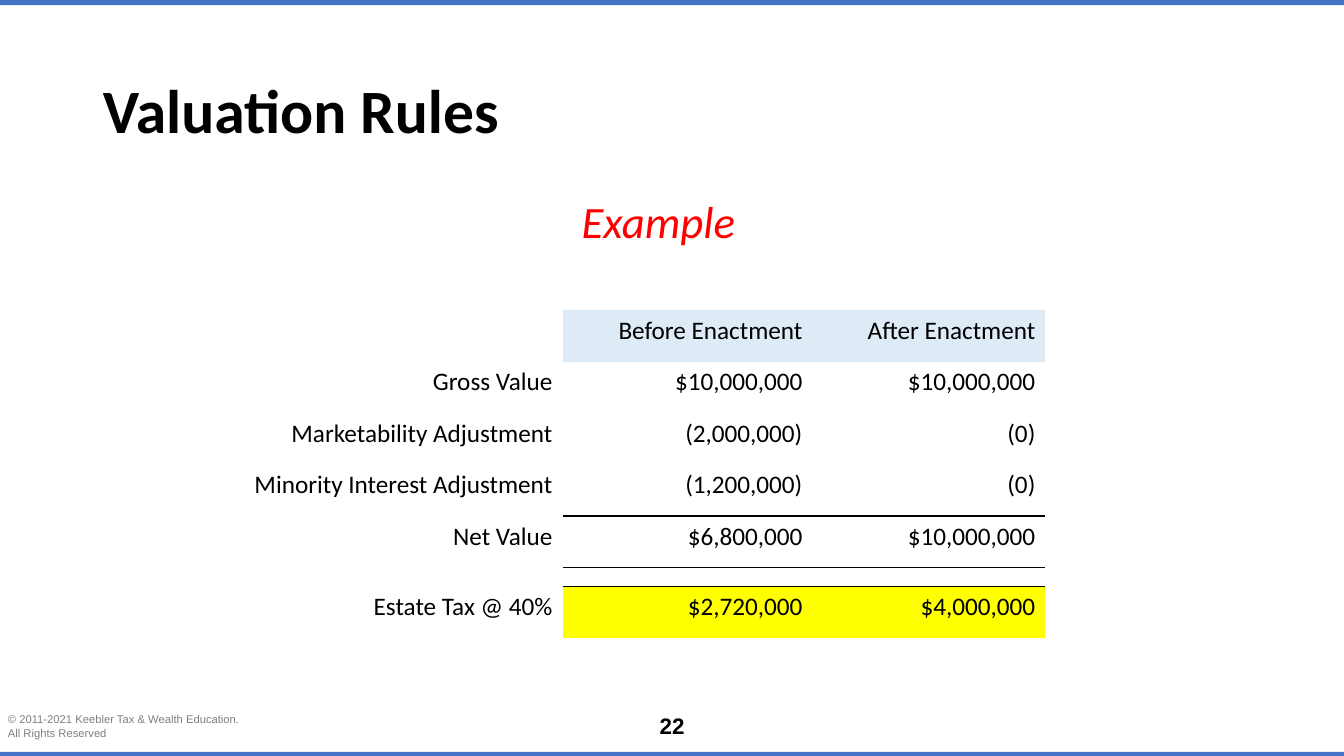
from lxml import etree
from pptx import Presentation
from pptx.dml.color import RGBColor
from pptx.enum.shapes import MSO_SHAPE
from pptx.enum.text import MSO_ANCHOR, PP_ALIGN
from pptx.oxml.ns import qn
from pptx.util import Inches, Pt

LEFT, CENTER, RIGHT = PP_ALIGN.LEFT, PP_ALIGN.CENTER, PP_ALIGN.RIGHT
TOP, MIDDLE = MSO_ANCHOR.TOP, MSO_ANCHOR.MIDDLE
RECTANGLE = MSO_SHAPE.RECTANGLE
TITLE_ONLY = 5
PLAIN_TABLE_STYLE = "{2D5ABB26-0587-4C30-8999-92F81FD0307C}"

COLORS = {
    "black": "000000",
    "gray": "7F7F7F",
    "red": "FF0000",
    "bar": "4472C4",
    "header": "DEEBF7",
    "highlight": "FFFF00",
}

VALUATION_ROWS = [
    ("", "Before Enactment", "After Enactment"),
    ("Gross Value", "$10,000,000", "$10,000,000"),
    ("Marketability Adjustment", "(2,000,000)", "(0)"),
    ("Minority Interest Adjustment", "(1,200,000)", "(0)"),
    ("Net Value", "$6,800,000", "$10,000,000"),
    ("", "", ""),
    ("Estate Tax @ 40%", "$2,720,000", "$4,000,000"),
]
COLUMN_WIDTHS = (3.82, 2.48, 2.31)
ROW_HEIGHT = 0.51
SPACER_HEIGHT = 0.19
SPACER_ROW = 5
RULED_ROWS = (4, 5, 6)
ROW_FILLS = {0: "header", 6: "highlight"}


def rgb(color):
    return RGBColor.from_string(COLORS[color])


def format_text(text_frame, size, color="black", font="Calibri", align=LEFT, bold=False, italic=False):
    for paragraph in text_frame.paragraphs:
        paragraph.alignment = align
        for run in paragraph.runs:
            run.font.name = font
            run.font.size = Pt(size)
            run.font.bold = bold
            run.font.italic = italic
            run.font.color.rgb = rgb(color)


def place(shape, box):
    shape.left, shape.top, shape.width, shape.height = (Inches(length) for length in box)


def add_text(slide, box, text, size, anchor=TOP, wrap=True, **style):
    shape = slide.shapes.add_textbox(*(Inches(length) for length in box))
    text_frame = shape.text_frame
    text_frame.word_wrap = wrap
    text_frame.vertical_anchor = anchor
    text_frame.text = text
    format_text(text_frame, size, **style)


def add_bar(slide, box):
    bar = slide.shapes.add_shape(RECTANGLE, *(Inches(length) for length in box))
    bar.shadow.inherit = False
    bar.fill.solid()
    bar.fill.fore_color.rgb = rgb("bar")
    bar.line.fill.background()


def add_frame(slide):
    for top in (0, 7.46):
        add_bar(slide, (0, top, 13.33, 0.05))
    copyright_text = "© 2011-2021 Keebler Tax & Wealth Education.\nAll Rights Reserved"
    add_text(slide, (-0.02, 7.02, 2.55, 0.37), copyright_text, 8, wrap=False, font="Arial", color="gray")
    add_text(slide, (6.29, 7.02, 0.75, 0.37), "22", 16, font="Arial", align=CENTER, bold=True)


def add_title(slide, box):
    title = slide.shapes.title
    place(title, box)
    title.text_frame.text = "Valuation Rules"
    title.text_frame.vertical_anchor = MIDDLE
    title.text_frame.paragraphs[0].line_spacing = 0.9
    format_text(title.text_frame, 44, bold=True)


def add_border(cell, side):
    properties = cell._tc.get_or_add_tcPr()
    line = etree.SubElement(properties, qn(f"a:{side}"), w=str(Pt(1)))
    fill = etree.SubElement(line, qn("a:solidFill"))
    etree.SubElement(fill, qn("a:srgbClr"), val=COLORS["black"])


def format_cell(cell, row, column, text):
    cell.text = text
    format_text(cell.text_frame, 18, align=RIGHT)
    if row == SPACER_ROW:
        cell.margin_top = cell.margin_bottom = 0
        paragraph = cell.text_frame.paragraphs[0]
        etree.SubElement(paragraph._p, qn("a:endParaRPr"), sz="800")
    if column and row in RULED_ROWS:
        add_border(cell, "lnT")
    if column and row + 1 in RULED_ROWS:
        add_border(cell, "lnB")
    if column and row in ROW_FILLS:
        cell.fill.solid()
        cell.fill.fore_color.rgb = rgb(ROW_FILLS[row])
    else:
        cell.fill.background()


def add_valuation_table(slide, box):
    frame = slide.shapes.add_table(
        len(VALUATION_ROWS), len(COLUMN_WIDTHS), *(Inches(length) for length in box)
    )
    table = frame.table
    table.first_row = False
    table.horz_banding = False
    table._tbl.tblPr.find(qn("a:tableStyleId")).text = PLAIN_TABLE_STYLE
    for column, width in zip(table.columns, COLUMN_WIDTHS):
        column.width = Inches(width)
    for row, texts in enumerate(VALUATION_ROWS):
        table.rows[row].height = Inches(SPACER_HEIGHT if row == SPACER_ROW else ROW_HEIGHT)
        for column, text in enumerate(texts):
            format_cell(table.cell(row, column), row, column, text)


def main():
    presentation = Presentation()
    presentation.slide_width = Inches(13.33)
    presentation.slide_height = Inches(7.5)
    slide = presentation.slides.add_slide(presentation.slide_layouts[TITLE_ONLY])
    add_frame(slide)
    add_title(slide, (0.92, 0.4, 11.5, 1.45))
    add_valuation_table(slide, (1.76, 3.08, 8.61, 3.24))
    add_text(slide, (2.03, 1.85, 9, 0.67), "Example", 32, anchor=MIDDLE, color="red", align=CENTER, italic=True)
    presentation.save("out.pptx")


if __name__ == "__main__":
    main()
